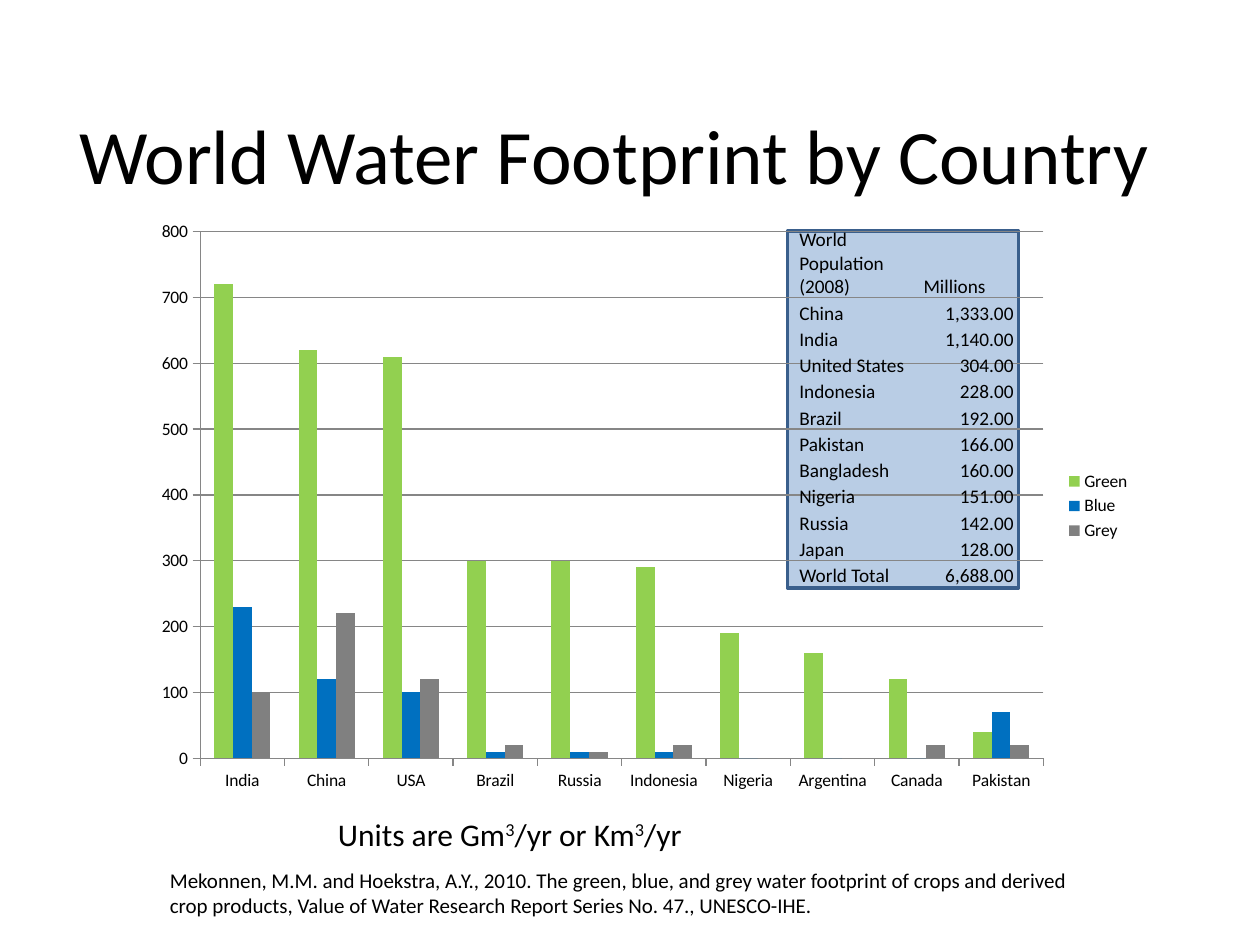
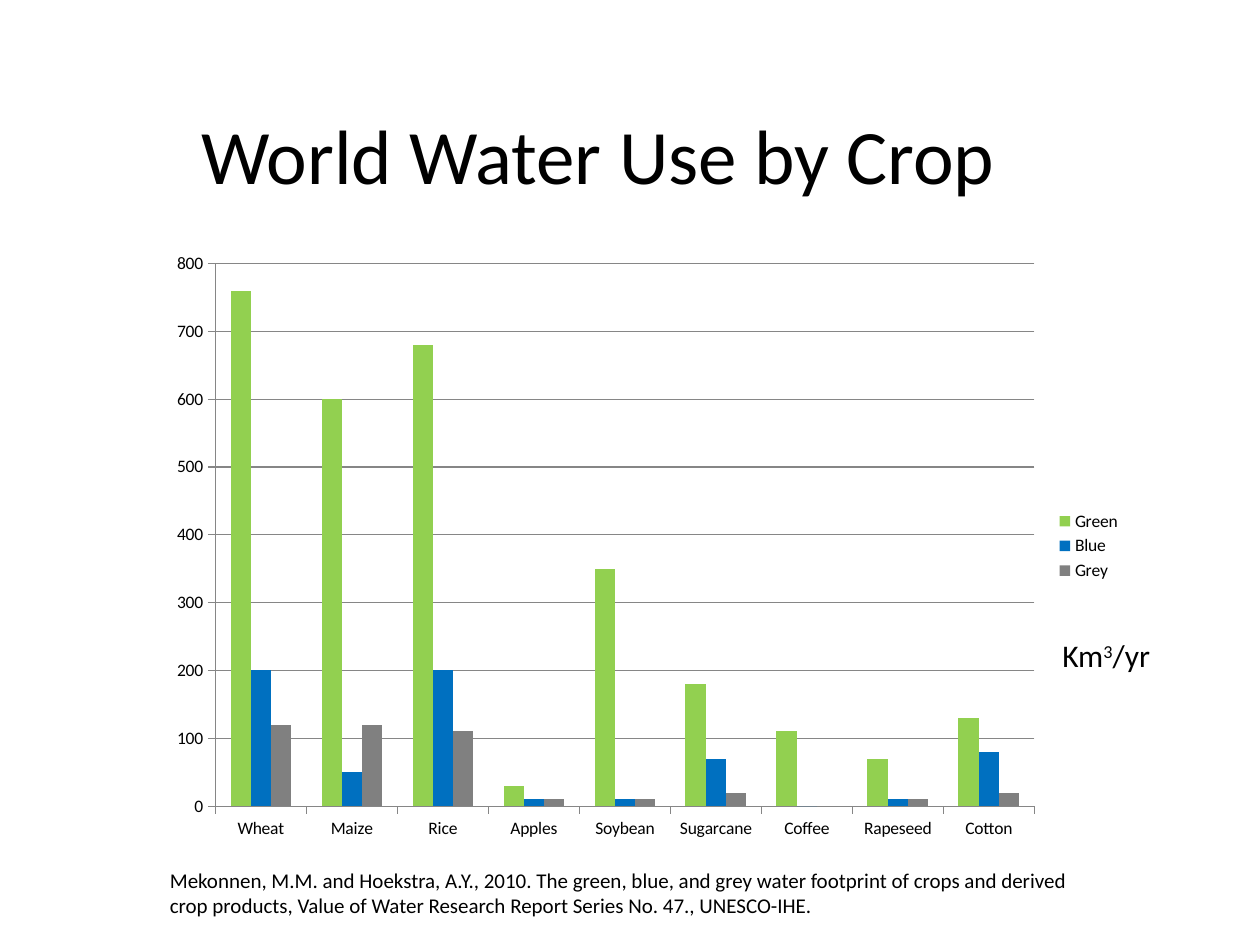
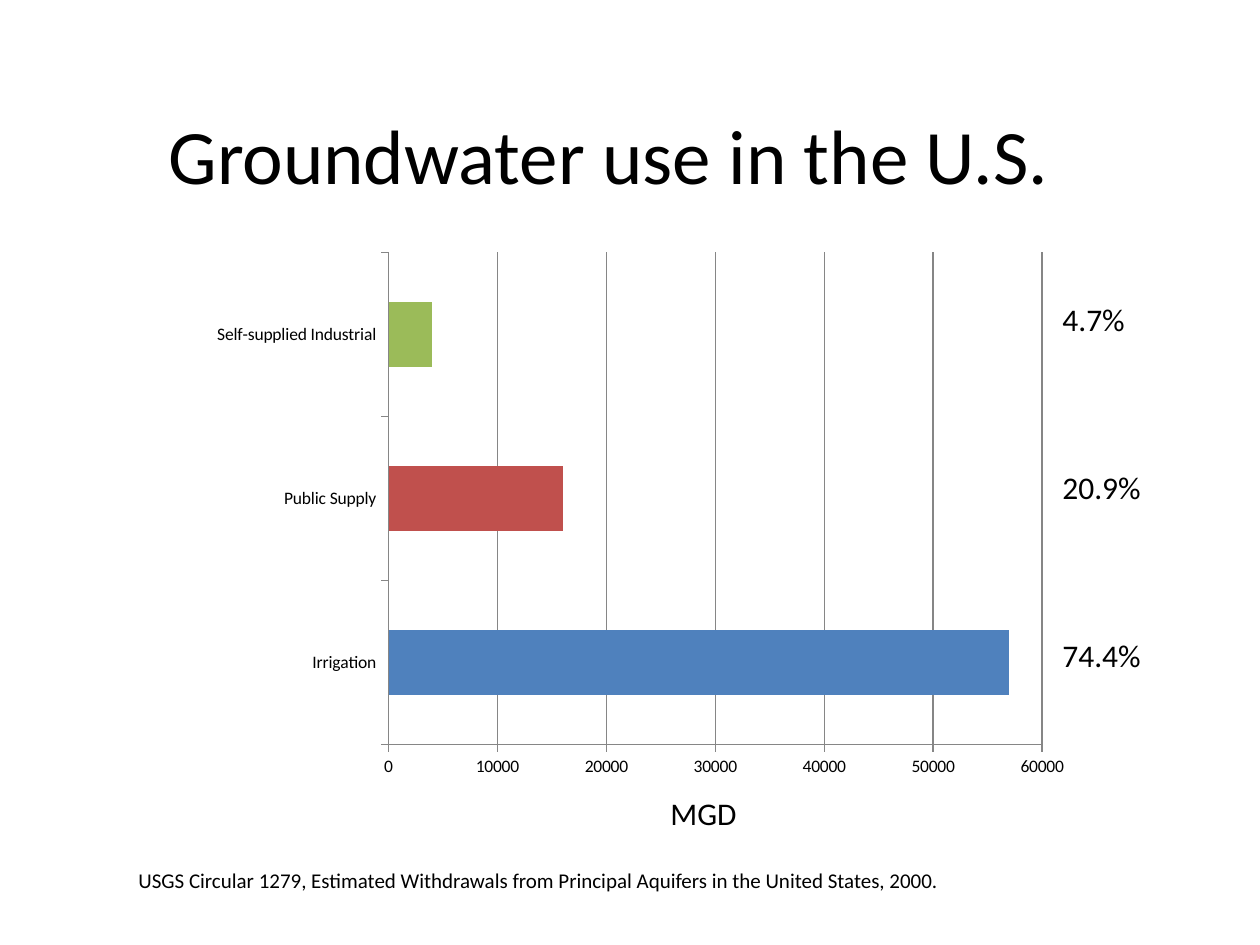
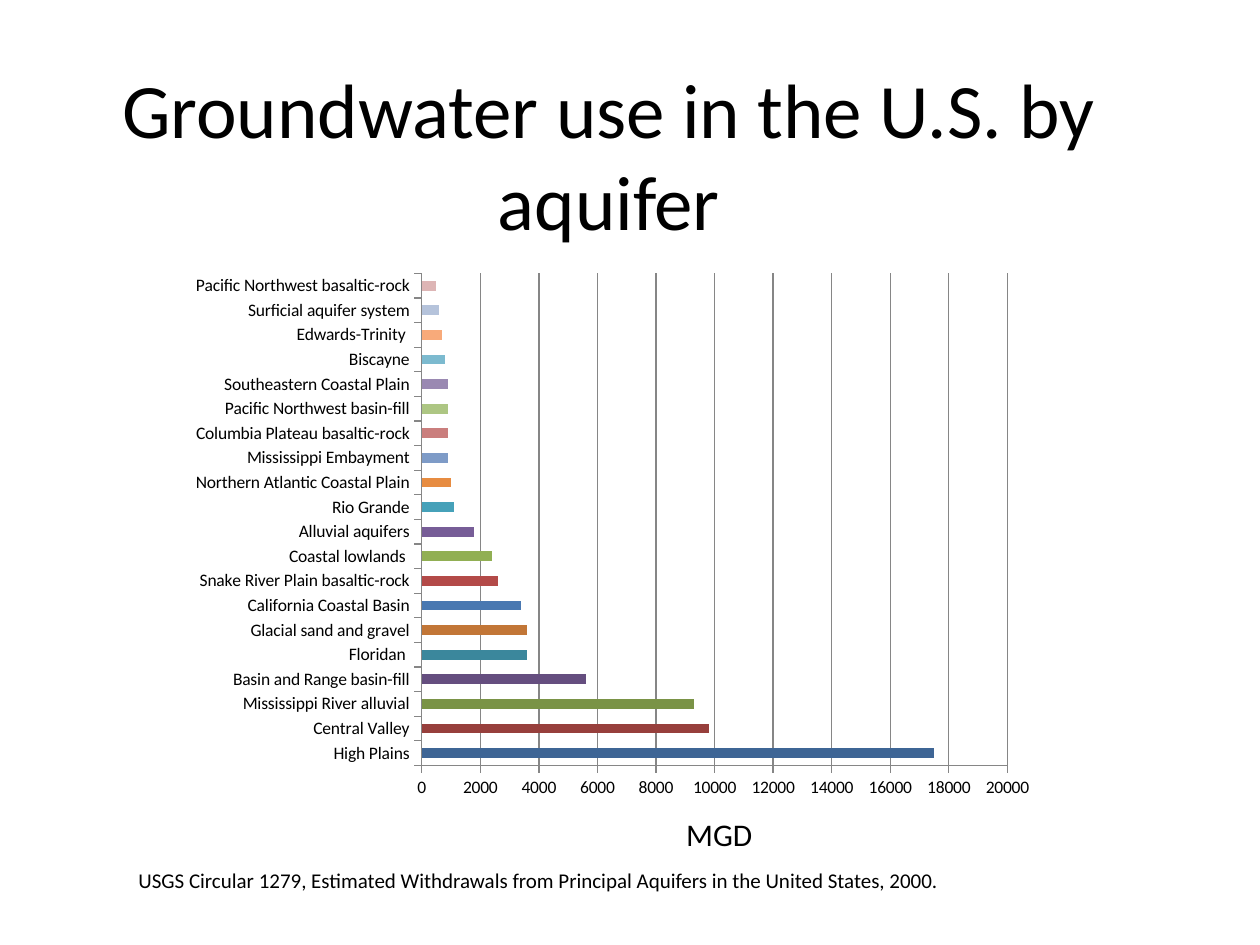
from lxml import etree
from pptx import Presentation
from pptx.chart import data as cd
from pptx.dml.color import RGBColor
from pptx.enum import chart as ch, shapes, text
from pptx.oxml import ns
from pptx.util import Pt

BLACK = RGBColor(0x00, 0x00, 0x00)
GRID = RGBColor(0x86, 0x86, 0x86)
PANEL = RGBColor(0xB9, 0xCD, 0xE5)
PANEL_LINE = RGBColor(0x3A, 0x5F, 0x8C)
WATER = {"Green": RGBColor(0x92, 0xD0, 0x50),
         "Blue": RGBColor(0x00, 0x70, 0xC0),
         "Grey": RGBColor(0x80, 0x80, 0x80)}
FONT = "Calibri"
PLAIN_TABLE = "{2D5ABB26-0587-4C30-8999-92F81FD0307C}"
LEFT, CENTER, RIGHT = text.PP_ALIGN.LEFT, text.PP_ALIGN.CENTER, text.PP_ALIGN.RIGHT
COLUMNS = ch.XL_CHART_TYPE.COLUMN_CLUSTERED
BARS = ch.XL_CHART_TYPE.BAR_CLUSTERED

MEKONNEN = ("Mekonnen, M.M. and Hoekstra, A.Y., 2010. The green, blue, and grey water "
            "footprint of crops and derived crop products, Value of Water Research "
            "Report Series No. 47., UNESCO-IHE.", (90, 492, 534, 36))
USGS = ("USGS Circular 1279, Estimated Withdrawals from Principal Aquifers in the "
        "United States, 2000.", (72, 492, 576, 21.6))

# Population table on the first slide
POPULATION = [("World Population (2008)", "Millions"),
              ("China", "1,333.00"), ("India", "1,140.00"),
              ("United States", "304.00"), ("Indonesia", "228.00"),
              ("Brazil", "192.00"), ("Pakistan", "166.00"),
              ("Bangladesh", "160.00"), ("Nigeria", "151.00"),
              ("Russia", "142.00"), ("Japan", "128.00"),
              ("World Total", "6,688.00")]

AQUIFERS = {"High Plains": 17500, "Central Valley": 9800,
            "Mississippi River alluvial": 9300, "Basin and Range basin-fill": 5600,
            "Floridan ": 3600, "Glacial sand and gravel": 3600,
            "California Coastal Basin": 3400, "Snake River Plain basaltic-rock": 2600,
            "Coastal lowlands ": 2400, "Alluvial aquifers": 1800, "Rio Grande": 1100,
            "Northern Atlantic Coastal Plain": 1000, "Mississippi Embayment": 900,
            "Columbia Plateau basaltic-rock": 900, "Pacific Northwest basin-fill": 900,
            "Southeastern Coastal Plain": 900, "Biscayne": 800, "Edwards-Trinity ": 700,
            "Surficial aquifer system": 600, "Pacific Northwest basaltic-rock": 500}

# Each slide: title and its width, source, chart and labels; ^ encloses superscripts
SLIDES = [
    dict(title="World Water Footprint by Country", width=630, source=MEKONNEN,
         kind=COLUMNS, chart=(81, 120, 572.4, 338.4),
         cats=["India", "China", "USA", "Brazil", "Russia", "Indonesia", "Nigeria",
               "Argentina", "Canada", "Pakistan"],
         series={"Green": [720, 620, 610, 300, 300, 290, 190, 160, 120, 40],
                 "Blue": [230, 120, 100, 10, 10, 10, 0, 0, 0, 70],
                 "Grey": [100, 220, 120, 20, 10, 20, 0, 0, 20, 20]},
         labels=[("Units are Gm^3^/yr or Km^3^/yr", (186, 462, 258, 29), LEFT)]),
    dict(title="World Water Use by Crop", width=612, source=MEKONNEN,
         kind=COLUMNS, chart=(90, 138, 558, 348),
         cats=["Wheat", "Maize", "Rice", "Apples", "Soybean", "Sugarcane", "Coffee",
               "Rapeseed", "Cotton"],
         series={"Green": [760, 600, 680, 30, 350, 180, 110, 70, 130],
                 "Blue": [200, 50, 200, 10, 10, 70, 0, 10, 80],
                 "Grey": [120, 120, 110, 10, 10, 20, 0, 10, 20]},
         labels=[("Km^3^/yr", (600, 360, 72, 29), LEFT)]),
    dict(title="Groundwater use in the U.S.", width=624, source=USGS,
         kind=BARS, chart=(114, 138, 504, 312),
         cats=["Irrigation", "Public Supply", "Self-supplied Industrial"],
         series={"Series 1": [57000, 16000, 4000]},
         labels=[("4.7%", (600, 168, 78, 30), LEFT),
                 ("20.9%", (600, 264, 84, 29), LEFT),
                 ("74.4%", (600, 360, 60, 29), LEFT),
                 ("MGD", (324, 450, 156, 29), CENTER)]),
    dict(title="Groundwater use in the U.S. by aquifer", width=624, source=USGS,
         kind=BARS, chart=(102, 150, 496, 312),
         cats=list(AQUIFERS), series={"Series 1": list(AQUIFERS.values())},
         labels=[("MGD", (385, 462, 53, 29), LEFT)]),
]


def set_font(font, size):
    font.name, font.size, font.color.rgb = FONT, Pt(size), BLACK


def add_text(s, content, box, size, align=LEFT):
    tf = s.shapes.add_textbox(*map(Pt, box)).text_frame
    tf.word_wrap = True
    p = tf.paragraphs[0]
    p.alignment = align
    set_font(p.font, size)
    for i, part in enumerate(content.split("^")):
        r = p.add_run()
        r.text = part
        if i % 2:
            r.font._element.set("baseline", "30000")


prs = Presentation()
prs.slide_width, prs.slide_height = Pt(720), Pt(540)

for number, item in enumerate(SLIDES):
    s = prs.slides.add_slide(prs.slide_layouts[5])

    # Title and source
    title = s.shapes.title
    title.left, title.top, title.width, title.height = map(Pt, (36, 30, item["width"], 116))
    title.text_frame.text = item["title"]
    title.text_frame.vertical_anchor = text.MSO_ANCHOR.MIDDLE
    p = title.text_frame.paragraphs[0]
    p.alignment = CENTER
    set_font(p.font, 44)
    source, box = item["source"]
    add_text(s, source, box, 12)

    # Panel behind the population table
    if number == 0:
        sp = s.shapes.add_shape(shapes.MSO_SHAPE.RECTANGLE, *map(Pt, (450, 132, 132, 204)))
        sp.shadow.inherit = False
        sp.fill.solid()
        sp.fill.fore_color.rgb = PANEL
        sp.line.color.rgb, sp.line.width = PANEL_LINE, Pt(2)

    # Chart, see-through so that the panel shows
    data = cd.CategoryChartData()
    data.categories = item["cats"]
    for name, values in item["series"].items():
        data.add_series(name, values)
    chart = s.shapes.add_chart(item["kind"], *map(Pt, item["chart"]), data).chart
    set_font(chart.font, 10)
    chart.has_title = False
    sppr = etree.Element(ns.qn("c:spPr"))
    etree.SubElement(sppr, ns.qn("a:noFill"))
    etree.SubElement(etree.SubElement(sppr, ns.qn("a:ln")), ns.qn("a:noFill"))
    chart.element.find(ns.qn("c:chart")).addnext(sppr)
    plot = chart.plots[0]
    plot.gap_width = 150
    plot.vary_by_categories = item["kind"] == BARS
    for axis in (chart.category_axis, chart.value_axis):
        axis.major_tick_mark = ch.XL_TICK_MARK.OUTSIDE
        axis.minor_tick_mark = ch.XL_TICK_MARK.NONE
        axis.format.line.color.rgb, axis.format.line.width = GRID, Pt(0.75)
    chart.value_axis.has_major_gridlines = True
    grid = chart.value_axis.major_gridlines.format.line
    grid.color.rgb, grid.width = GRID, Pt(0.75)
    chart.has_legend = item["kind"] == COLUMNS
    if chart.has_legend:
        chart.legend.position = ch.XL_LEGEND_POSITION.RIGHT
        chart.legend.include_in_layout = False
        for series in plot.series:
            series.format.fill.solid()
            series.format.fill.fore_color.rgb = WATER[series.name]

    # Population table
    if number == 0:
        table = s.shapes.add_table(len(POPULATION), 2, *map(Pt, (456, 126, 124, 210))).table
        table.first_row = table.horz_banding = False
        table._tbl.tblPr.find(ns.qn("a:tableStyleId")).text = PLAIN_TABLE
        table.columns[0].width, table.columns[1].width = Pt(71), Pt(53)
        for i, row in enumerate(POPULATION):
            table.rows[i].height = Pt(15 if i else 45)
            for j, value in enumerate(row):
                cell = table.cell(i, j)
                cell.fill.background()
                cell.vertical_anchor = text.MSO_ANCHOR.BOTTOM
                cell.margin_left = cell.margin_right = cell.margin_top = Pt(0.75)
                cell.margin_bottom = 0
                cell.text = value
                p = cell.text_frame.paragraphs[0]
                p.alignment = RIGHT if i and j else LEFT
                set_font(p.font, 11)

    # Units and shares
    for content, box, align in item["labels"]:
        add_text(s, content, box, 18, align)

prs.save("out.pptx")
